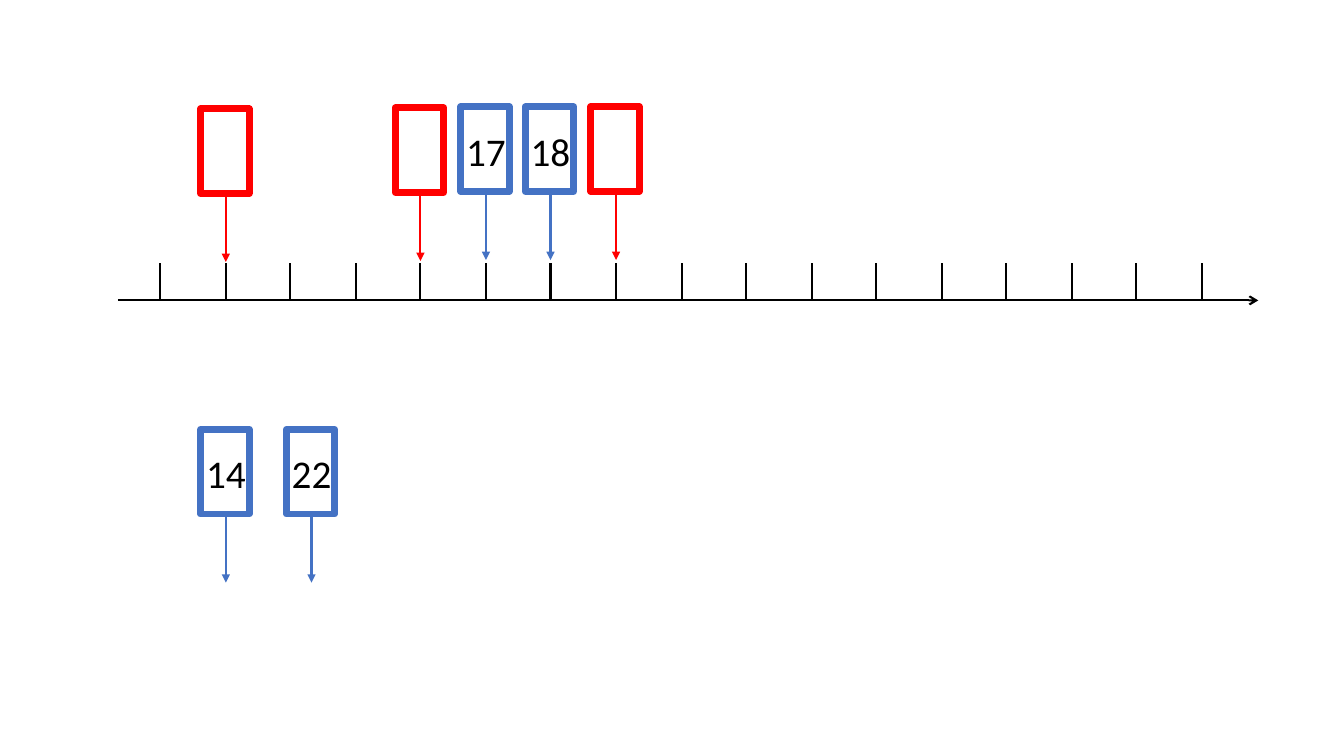
import dataclasses

import lxml.etree
import pptx
import pptx.dml.color
import pptx.enum.shapes
import pptx.enum.text
import pptx.oxml.ns
import pptx.util

PIXEL = 9144


@dataclasses.dataclass(frozen=True)
class Theme:
    ink: str = "000000"
    known: str = "4472C4"
    unknown: str = "FF0000"
    font: str = "Calibri"
    number_size: int = 28
    frame_width: float = 5
    line_width: float = 1.5


@dataclasses.dataclass(frozen=True)
class Box:
    left: int
    top: int
    width: int
    height: int

    def emu(self):
        return [pptx.util.Emu(side * PIXEL) for side in dataclasses.astuple(self)]


THEME = Theme()
AXIS_BOX = Box(117, 261, 1131, 37)
FIRST_TICK, LAST_TICK, TICK_STEPS = 159, 1192, 16
CARD_WIDTH, CARD_HEIGHT = 48, 84
PLACED_CARDS = [(1, 108, ""), (4, 107, ""), (5, 106, "17"), (6, 106, "18"), (7, 106, "")]
LOOSE_CARDS = [(224, 426, "14"), (309, 426, "22")]


def rgb(colour):
    return pptx.dml.color.RGBColor.from_string(colour)


def tick_position(index):
    return round(FIRST_TICK + (LAST_TICK - FIRST_TICK) * index / TICK_STEPS)


def add_text(shapes, box, text, *, size, colour, font):
    label = shapes.add_textbox(*box.emu())
    frame = label.text_frame
    frame.word_wrap = True
    frame.auto_size = pptx.enum.text.MSO_AUTO_SIZE.SHAPE_TO_FIT_TEXT
    para = frame.paragraphs[0]
    para.alignment = pptx.enum.text.PP_ALIGN.CENTER
    span = para.add_run()
    span.text = text
    span.font.size = pptx.util.Pt(size)
    span.font.name = font
    span.font.color.rgb = rgb(colour)


def add_line(shapes, start, end, colour, head=None):
    ends = [pptx.util.Emu(value * PIXEL) for value in (*start, *end)]
    line = shapes.add_connector(pptx.enum.shapes.MSO_CONNECTOR.STRAIGHT, *ends)
    line.line.color.rgb = rgb(colour)
    line.line.width = pptx.util.Pt(THEME.line_width)
    properties = line.element.find(pptx.oxml.ns.qn("p:spPr"))
    if head:
        outline = properties.find(pptx.oxml.ns.qn("a:ln"))
        lxml.etree.SubElement(outline, pptx.oxml.ns.qn("a:tailEnd"), type=head)
    lxml.etree.SubElement(properties, pptx.oxml.ns.qn("a:effectLst"))


def draw_number_line(page, box):
    shapes = page.shapes.add_group_shape().shapes
    base = box.top + box.height
    add_line(shapes, (box.left, base), (box.left + box.width, base), THEME.ink, "arrow")
    for index in range(TICK_STEPS + 1):
        position = tick_position(index)
        add_line(shapes, (position, base), (position, box.top), THEME.ink)


def draw_card(page, box, number):
    shapes = page.shapes.add_group_shape().shapes
    colour = THEME.known if number else THEME.unknown
    frame = shapes.add_shape(pptx.enum.shapes.MSO_SHAPE.RECTANGLE, *box.emu())
    frame.shadow.inherit = False
    frame.fill.background()
    frame.line.color.rgb = rgb(colour)
    frame.line.width = pptx.util.Pt(THEME.frame_width)
    if number:
        label_box = Box(box.left - 19, box.top + 15, 88, 57)
        add_text(shapes, label_box, number, size=THEME.number_size,
                 colour=THEME.ink, font=THEME.font)
    pointer = box.left + 25
    add_line(shapes, (pointer, box.top + 82), (pointer, box.top + 152), colour, "triangle")


def main():
    deck = pptx.Presentation()
    deck.slide_width = pptx.util.Emu(1333 * PIXEL)
    deck.slide_height = pptx.util.Emu(750 * PIXEL)
    page = deck.slides.add_slide(deck.slide_layouts[6])
    draw_number_line(page, AXIS_BOX)
    placed = [(tick_position(index), top, number) for index, top, number in PLACED_CARDS]
    for pointer, top, number in placed + LOOSE_CARDS:
        draw_card(page, Box(pointer - 25, top, CARD_WIDTH, CARD_HEIGHT), number)
    deck.save("out.pptx")


if __name__ == "__main__":
    main()
